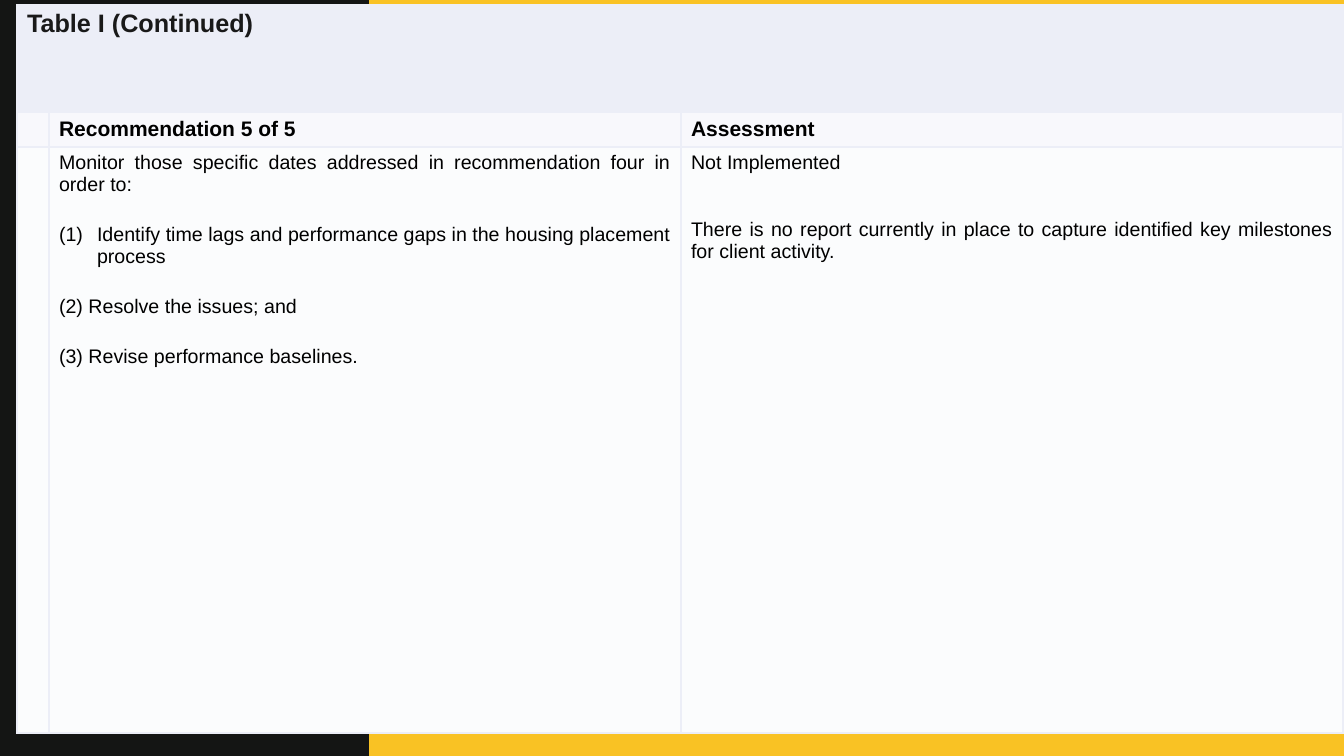
from lxml.etree import SubElement
from pptx import Presentation
from pptx.dml.color import RGBColor
from pptx.enum.shapes import MSO_SHAPE
from pptx.enum.text import PP_ALIGN
from pptx.oxml import parse_xml
from pptx.oxml.ns import nsdecls, qn
from pptx.util import Emu, Pt

SIZE = (1344, 756)
BACKGROUND, BAND, RULE = "F9C224", "141514", "ECEEF7"
BAND_BOX = (0, 0, 369, 756)
TABLE_BOX = (17, 5, 1326, 728)
COLUMNS = (32, 632, 662)
ROWS = (107, 35, 586)
FILLS = ("ECEEF7", "F8F8FC", "FBFCFD")
BOTTOM_RULES = (1, 2, 1)

TITLE = {"size": 18, "bold": True, "color": "191919"}
HEADING = {"size": 15, "bold": True, "color": "000000"}
BODY = {"size": 14, "bold": False, "color": "000000"}

PLAIN = {"space_after": Pt(0)}
STEP = {"alignment": PP_ALIGN.JUSTIFY, "space_after": Pt(20)}
STATUS = {"alignment": PP_ALIGN.JUSTIFY, "space_after": Pt(32)}
LAST = {"alignment": PP_ALIGN.JUSTIFY, "space_after": Pt(2)}

CELLS = {
    (0, 0): (TITLE, [("Table I (Continued)", PLAIN, False)]),
    (1, 1): (HEADING, [("Recommendation 5 of 5", PLAIN, False)]),
    (1, 2): (HEADING, [("Assessment", PLAIN, False)]),
    (2, 1): (BODY, [
        ("Monitor those specific dates addressed in recommendation four in order to:", STEP, False),
        ("Identify time lags and performance gaps in the housing placement process", STEP, True),
        ("(2) Resolve the issues; and", STEP, False),
        ("(3) Revise performance baselines.", LAST, False),
    ]),
    (2, 2): (BODY, [
        ("Not Implemented", STATUS, False),
        ("There is no report currently in place to capture identified key milestones for client activity.",
         LAST, False),
    ]),
}


def px(length):
    return Emu(round(length * 914400 / 100.8))


def color(value):
    return RGBColor.from_string(value)


def paint(fill, value):
    fill.solid()
    fill.fore_color.rgb = color(value)


def write(frame, style, lines):
    for index, (text, layout, numbered) in enumerate(lines):
        para = frame.add_paragraph() if index else frame.paragraphs[0]
        for name, value in layout.items():
            setattr(para, name, value)
        if numbered:
            properties = para._p.get_or_add_pPr()
            properties.set("marL", str(px(38)))
            properties.set("indent", str(-px(38)))
            SubElement(properties, qn("a:buFont"), typeface="Arial")
            SubElement(properties, qn("a:buAutoNum"), type="arabicParenBoth")
        span = para.add_run()
        span.text = text
        font = {"name": "Arial", "size": Pt(style["size"]), "bold": style["bold"]}
        for name, value in font.items():
            setattr(span.font, name, value)
        span.font.color.rgb = color(style["color"])


def rule_cell(cell, bottom):
    properties = cell._tc.get_or_add_tcPr()
    widths = {"lnL": 1, "lnR": 1, "lnT": 1, "lnB": bottom}
    for index, (side, width) in enumerate(widths.items()):
        properties.insert(index, parse_xml(
            f'<a:{side} {nsdecls("a")} w="{Pt(width)}"><a:solidFill>'
            f'<a:srgbClr val="{RULE}"/></a:solidFill></a:{side}>'))


def add_table(page):
    table = page.shapes.add_table(len(ROWS), len(COLUMNS), *map(px, TABLE_BOX)).table
    table.first_row = table.horz_banding = False
    for column, width in zip(table.columns, COLUMNS):
        column.width = px(width)
    for row, height in zip(table.rows, ROWS):
        row.height = px(height)
    table.cell(0, 0).merge(table.cell(0, len(COLUMNS) - 1))
    for row, (fill, bottom) in enumerate(zip(FILLS, BOTTOM_RULES)):
        for column in range(len(COLUMNS)):
            cell = table.cell(row, column)
            paint(cell.fill, fill)
            rule_cell(cell, bottom)
            if (row, column) in CELLS:
                write(cell.text_frame, *CELLS[row, column])
            else:
                para = cell.text_frame.paragraphs[0]
                para.font.size = Pt(BODY["size"])
                para._p.get_or_add_endParaRPr().set("sz", str(BODY["size"] * 100))


def main():
    deck = Presentation()
    deck.slide_width, deck.slide_height = map(px, SIZE)
    page = deck.slides.add_slide(deck.slide_layouts[6])
    paint(page.background.fill, BACKGROUND)

    band = page.shapes.add_shape(MSO_SHAPE.RECTANGLE, *map(px, BAND_BOX))
    band.shadow.inherit = False
    paint(band.fill, BAND)
    band.line.fill.background()

    add_table(page)
    deck.save("out.pptx")


if __name__ == "__main__":
    main()
